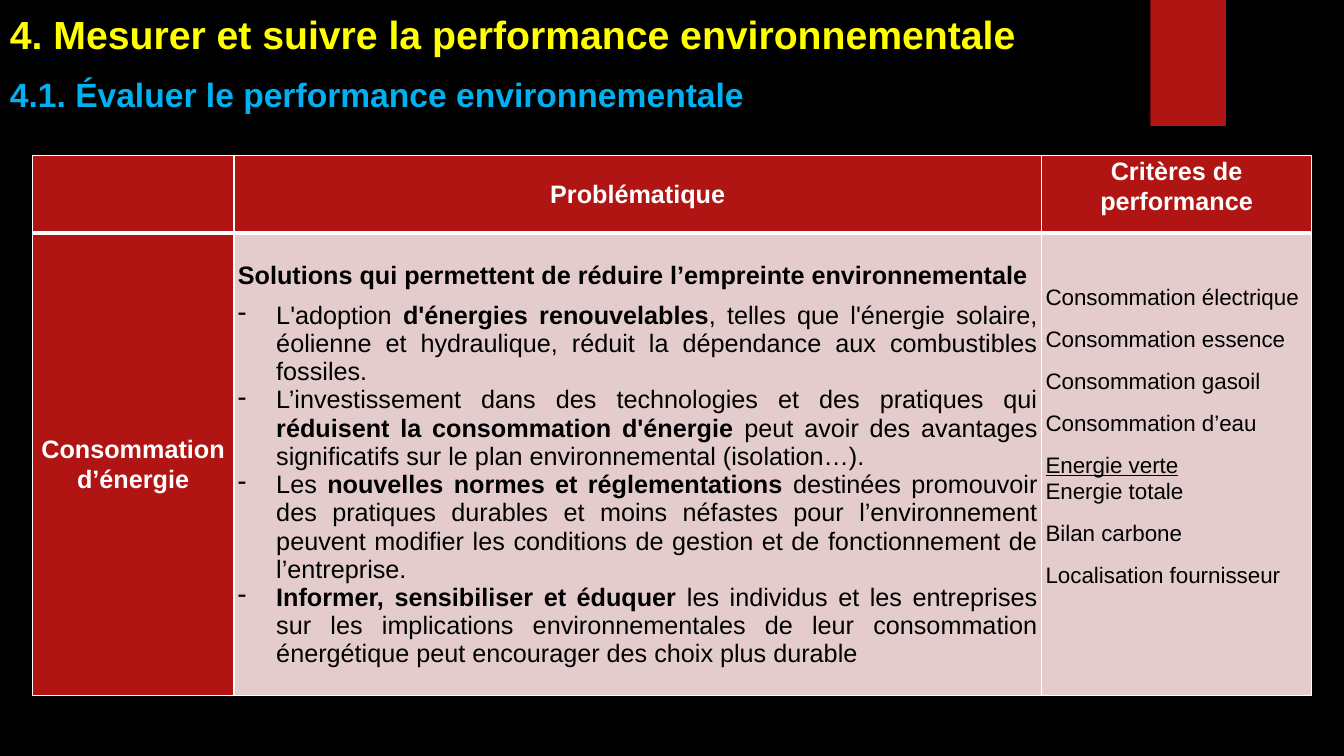
from pptx import Presentation
from pptx.dml.color import RGBColor
from pptx.enum.shapes import MSO_SHAPE as Shape
from pptx.enum.text import MSO_ANCHOR as Anchor, PP_ALIGN as Align
from pptx.oxml import parse_xml
from pptx.oxml.ns import nsdecls
from pptx.util import Inches, Pt

RED, PINK, WHITE, BLACK = "B01513", "E4CCCC", "FFFFFF", "000000"


def color(hex_string):
    return RGBColor.from_string(hex_string)


def add_run(paragraph, text, size, hex_string, bold=False, underline=False):
    run = paragraph.add_run()
    run.text = text
    font = run.font
    font.name, font.size = "Arial", Pt(size)
    font.bold, font.underline = bold, underline
    font.color.rgb = color(hex_string)


presentation = Presentation()
presentation.slide_width, presentation.slide_height = Inches(13.33), Inches(7.5)
slide = presentation.slides.add_slide(presentation.slide_layouts[6])
slide.background.fill.solid()
slide.background.fill.fore_color.rgb = color(BLACK)

# Red tab at the top
tab = slide.shapes.add_shape(
    Shape.RECTANGLE, Inches(11.41), Inches(0), Inches(0.75), Inches(1.25))
tab.shadow.inherit = False
tab.fill.solid()
tab.fill.fore_color.rgb = color(RED)
tab.line.fill.background()

# Headings
heading_box = slide.shapes.add_textbox(
    Inches(0), Inches(0.05), Inches(12.69), Inches(1.14))
heading = heading_box.text_frame
heading.word_wrap = True
add_run(heading.paragraphs[0],
        "4. Mesurer et suivre la performance environnementale", 28, "FFFF00", bold=True)
subheading = heading.add_paragraph()
subheading.space_before = Pt(12)
add_run(subheading, "4.1. Évaluer le performance environnementale", 24, "00B0F0", bold=True)

# Table grid: fills, margins and borders
table = slide.shapes.add_table(
    2, 3, Inches(0.32), Inches(1.54), Inches(12.69), Inches(5.36)).table
for column, width in zip(table.columns, (2, 8.01, 2.68)):
    column.width = Inches(width)
for row, height in zip(table.rows, (0.77, 4.59)):
    row.height = Inches(height)

for row_index in range(2):
    for column_index in range(3):
        cell = table.cell(row_index, column_index)
        cell.margin_left = cell.margin_right = Inches(0.04)
        cell.margin_top = cell.margin_bottom = Inches(0)
        cell.vertical_anchor = Anchor.MIDDLE
        cell.fill.solid()
        is_header = row_index == 0 or column_index == 0
        cell.fill.fore_color.rgb = color(RED if is_header else PINK)
        properties = cell._tc.get_or_add_tcPr()
        for position, side in enumerate(("lnL", "lnR", "lnT", "lnB")):
            at_divider = (row_index, side) in ((0, "lnB"), (1, "lnT"))
            border = parse_xml(
                f'<a:{side} {nsdecls("a")} w="{Pt(3 if at_divider else 1)}"><a:solidFill>'
                f'<a:srgbClr val="{WHITE}"/></a:solidFill></a:{side}>')
            properties.insert(position, border)

# Header cells
for row_index, column_index, title in ((0, 1, "Problématique"),
                                       (0, 2, "Critères de performance"),
                                       (1, 0, "Consommation d’énergie")):
    paragraph = table.cell(row_index, column_index).text_frame.paragraphs[0]
    paragraph.alignment = Align.CENTER
    paragraph.line_spacing = 1.07
    paragraph.space_after = Pt(8 if row_index else 3)
    add_run(paragraph, title, 18, WHITE, bold=True)
table.cell(0, 2).vertical_anchor = Anchor.TOP

# Solutions: each one is a list of (text, bold) runs
solutions = [
    [("L'adoption ", False), ("d'énergies renouvelables", True),
     (", telles que l'énergie solaire, éolienne et hydraulique, réduit la "
      "dépendance aux combustibles fossiles.", False)],
    [("L’investissement dans des technologies et des pratiques qui ", False),
     ("réduisent la consommation d'énergie ", True),
     ("peut avoir des avantages significatifs sur le plan environnemental "
      "(isolation…).", False)],
    [("Les ", False), ("nouvelles normes et réglementations ", True),
     ("destinées promouvoir des pratiques durables et moins néfastes pour "
      "l’environnement peuvent modifier les conditions de gestion et de "
      "fonctionnement de l’entreprise.", False)],
    [("Informer, sensibiliser et éduquer", True),
     (" les individus et les entreprises sur les implications environnementales "
      "de leur consommation énergétique peut encourager des choix plus durable", False)],
]
solutions_frame = table.cell(1, 1).text_frame
paragraph = solutions_frame.paragraphs[0]
paragraph.line_spacing = 1.07
paragraph.space_after = Pt(8)
add_run(paragraph, "Solutions qui permettent de réduire l’empreinte environnementale",
        18, BLACK, bold=True)
for solution in solutions:
    paragraph = solutions_frame.add_paragraph()
    paragraph.alignment = Align.JUSTIFY
    paragraph_properties = paragraph._p.get_or_add_pPr()
    paragraph_properties.set("marL", str(Inches(0.38)))
    paragraph_properties.set("indent", str(Inches(-0.38)))
    paragraph_properties.append(parse_xml(f'<a:buChar {nsdecls("a")} char="-"/>'))
    for text, bold in solution:
        add_run(paragraph, text, 18, BLACK, bold)

# Performance criteria: text, space before, space after, underlined
criteria = [
    ("Consommation électrique", 0, 8, False),
    ("Consommation essence", 3, 8, False),
    ("Consommation gasoil", 3, 8, False),
    ("Consommation d’eau", 3, 8, False),
    ("Energie verte", 3, 0, True),
    ("Energie totale", 0, 8, False),
    ("Bilan carbone", 3, 8, False),
    ("Localisation fournisseur", 3, 8, False),
]
criteria_cell = table.cell(1, 2)
criteria_cell.vertical_anchor = Anchor.TOP
criteria_cell.margin_top = Inches(0.5)
criteria_frame = criteria_cell.text_frame
for index, (text, before, after, underline) in enumerate(criteria):
    paragraph = criteria_frame.add_paragraph() if index else criteria_frame.paragraphs[0]
    paragraph.line_spacing = 1.07
    paragraph.space_before, paragraph.space_after = Pt(before), Pt(after)
    add_run(paragraph, text, 16, BLACK, underline=underline)

presentation.save("out.pptx")
